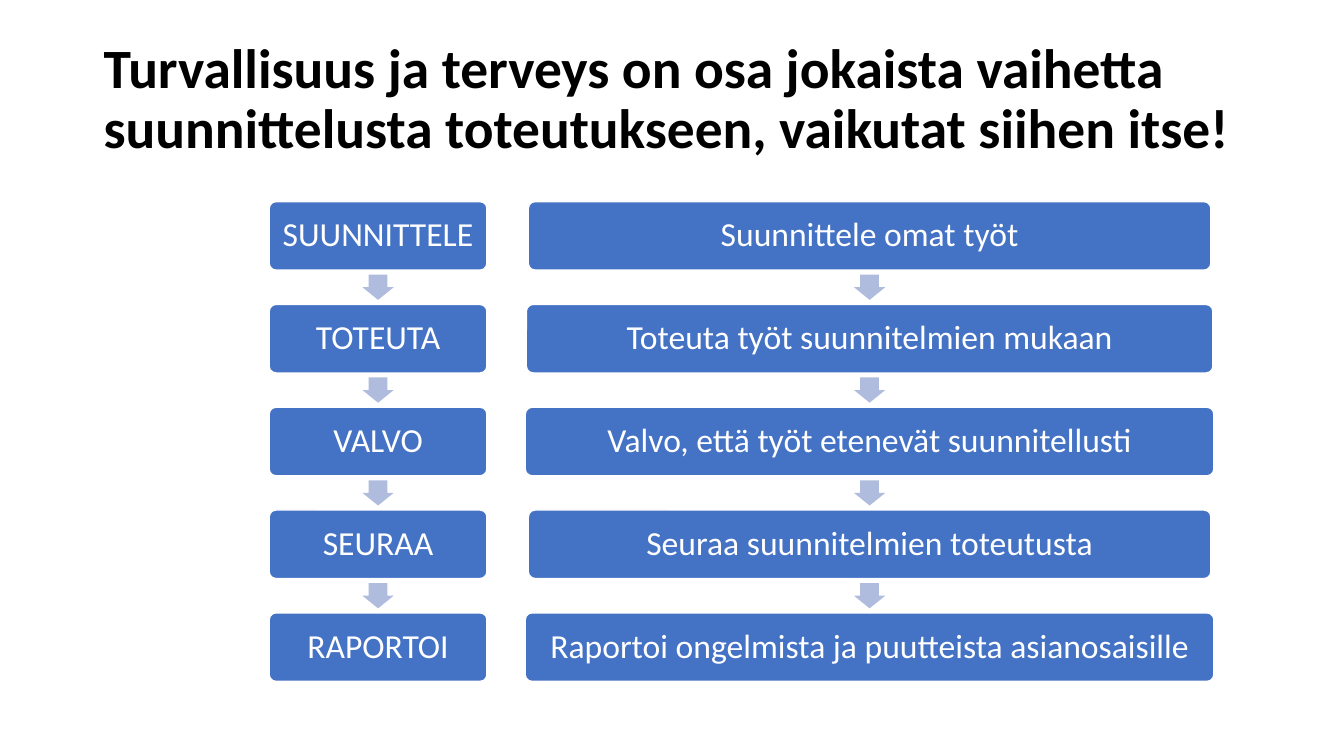
from pptx import Presentation
from pptx import util as u
from pptx.dml.color import RGBColor
from pptx.enum import shapes, text

TITLE = "Turvallisuus ja terveys on osa jokaista vaihetta suunnittelusta toteutukseen, vaikutat siihen itse!"
COLUMNS = [
    {"center": 3.75, "steps": [
        ("SUUNNITTELE", 2.16),
        ("TOTEUTA", 2.16),
        ("VALVO", 2.16),
        ("SEURAA", 2.16),
        ("RAPORTOI", 2.16),
    ]},
    {"center": 8.625, "steps": [
        ("Suunnittele omat työt", 6.77),
        ("Toteuta työt suunnitelmien mukaan", 6.81),
        ("Valvo, että työt etenevät suunnitellusti", 6.83),
        ("Seuraa suunnitelmien toteutusta", 6.77),
        ("Raportoi ongelmista ja puutteista asianosaisille", 6.83),
    ]},
]
COLORS = {"box": "4472C4", "arrow": "B0BCDE", "light": "FFFFFF", "dark": "000000"}
FONT = "Calibri"
TOP, PITCH, BOX_HEIGHT = 2, 1.02, 0.68
ARROW_WIDTH, ARROW_HEIGHT = 0.31, 0.25

presentation = Presentation()
presentation.slide_width, presentation.slide_height = u.Inches(13.33), u.Inches(7.5)
slide = presentation.slides.add_slide(presentation.slide_layouts[6])


def color(name):
    return RGBColor.from_string(COLORS[name])


def write(shape, words, size, ink, bold=False, align=text.PP_ALIGN.LEFT, margins=(0.1, 0.05)):
    frame = shape.text_frame
    frame.word_wrap = True
    frame.vertical_anchor = text.MSO_ANCHOR.MIDDLE
    frame.margin_left = frame.margin_right = u.Inches(margins[0])
    frame.margin_top = frame.margin_bottom = u.Inches(margins[1])
    paragraph = frame.paragraphs[0]
    paragraph.alignment = align
    paragraph.line_spacing = 0.9
    run = paragraph.add_run()
    run.text = words
    run.font.name, run.font.size, run.font.bold = FONT, u.Pt(size), bold
    run.font.color.rgb = color(ink)


def add_centered(kind, center, middle, width, height, fill):
    shape = slide.shapes.add_shape(
        kind, u.Inches(center - width / 2), u.Inches(middle - height / 2),
        u.Inches(width), u.Inches(height))
    shape.shadow.inherit = False
    shape.fill.solid()
    shape.fill.fore_color.rgb = color(fill)
    shape.line.fill.background()
    return shape


title = slide.shapes.add_textbox(u.Inches(0.93), u.Inches(0.27), u.Inches(11.5), u.Inches(1.45))
write(title, TITLE, 39.6, "dark", bold=True)

for column in COLUMNS:
    center = column["center"]
    for row, (words, width) in enumerate(column["steps"]):
        middle = TOP + row * PITCH + BOX_HEIGHT / 2
        if row:
            arrow = add_centered(shapes.MSO_SHAPE.DOWN_ARROW, center, middle - PITCH / 2,
                                 ARROW_WIDTH, ARROW_HEIGHT, "arrow")
            arrow.adjustments[0], arrow.adjustments[1] = 0.6, 0.5
        box = add_centered(shapes.MSO_SHAPE.ROUNDED_RECTANGLE, center, middle,
                           width, BOX_HEIGHT, "box")
        box.adjustments[0] = 0.1
        box.line.color.rgb = color("light")
        box.line.width = u.Pt(1)
        write(box, words, 24, "light", align=text.PP_ALIGN.CENTER, margins=(0.1, 0.1))

presentation.save("out.pptx")
